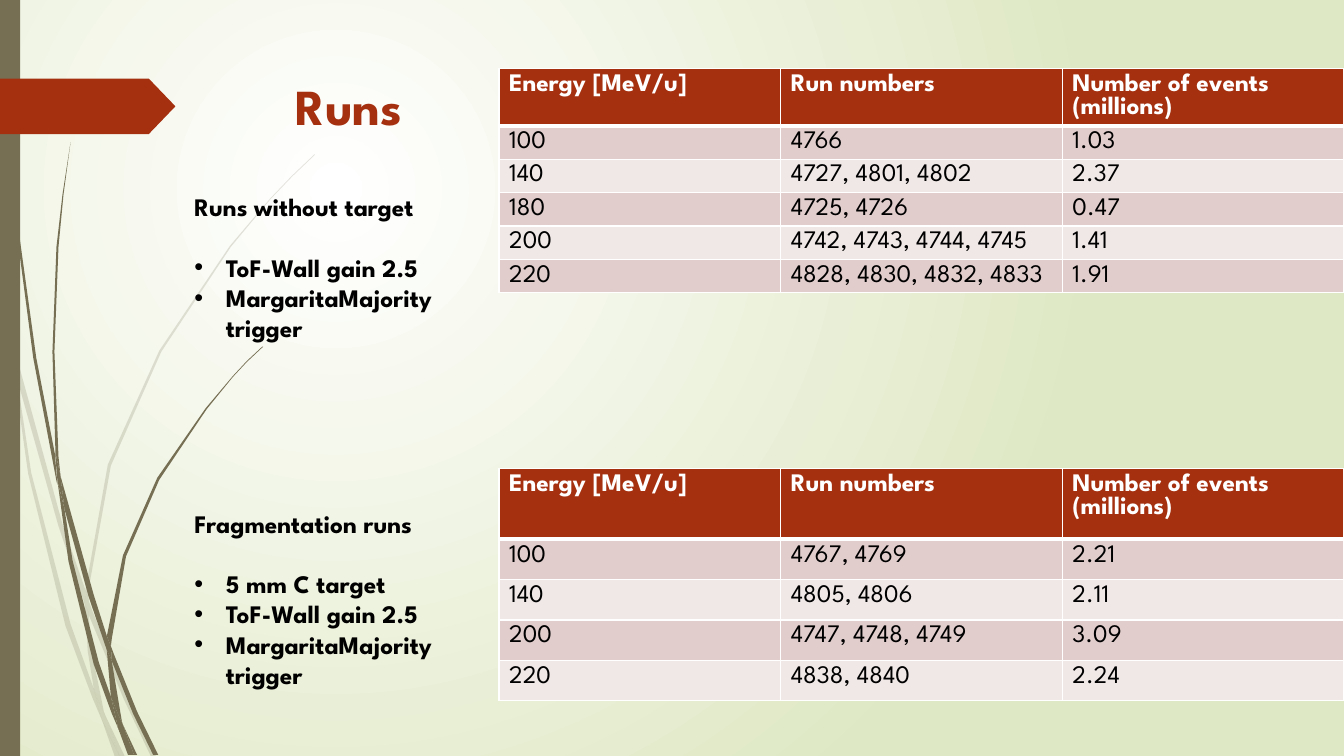
from lxml import etree
from pptx import Presentation
from pptx import util as u
from pptx.dml.color import RGBColor
from pptx.enum import shapes, text
from pptx.oxml.ns import qn

FONT = "League Spartan"
RUST = RGBColor(0xA5, 0x30, 0x10)
OLIVE = RGBColor(0x76, 0x6F, 0x54)
LIME = RGBColor(0xDF, 0xE8, 0xC4)
ROSE = RGBColor(0xE1, 0xCD, 0xCC)
BLUSH = RGBColor(0xF0, 0xE8, 0xE7)
WHITE = RGBColor(0xFF, 0xFF, 0xFF)
BLACK = RGBColor(0, 0, 0)

HEAD = ("Energy [MeV/u]", "Run numbers", "Number of events (millions)")
EMPTY = [
    ("100", "4766", "1.03"),
    ("140", "4727, 4801, 4802", "2.37"),
    ("180", "4725, 4726", "0.47"),
    ("200", "4742, 4743, 4744, 4745", "1.41"),
    ("220", "4828, 4830, 4832, 4833", "1.91"),
]
FRAGS = [
    ("100", "4767, 4769", "2.21"),
    ("140", "4805, 4806", "2.11"),
    ("200", "4747, 4748, 4749", "3.09"),
    ("220", "4838, 4840", "2.24"),
]

PALE = [
    [(.11, 3.5), (.09, 3.22), (0, 2.82), (0, 2.99), (.1, 3.44)],
    [(.58, 5.22), (.84, 5.99), (.85, 5.86), (.62, 5.2), (.14, 3.45), (.17, 3.76)],
    [(.92, 6.07), (.88, 5.96), (.88, 6.1), (1.23, 6.94), (1.5, 7.51), (1.55, 7.51), (1.27, 6.92)],
    [(1.19, 7.51), (1.24, 7.51), (1.05, 7.11)],
    [(.93, 6.83), (.7, 6.19), (.31, 4.69), (.17, 3.76), (.11, 3.5), (.28, 4.7), (.65, 6.21),
     (.92, 6.93), (1.01, 7.14), (.99, 7.07)],
    [(.84, 5.99), (.87, 6.46), (.93, 6.83), (.96, 6.92), (1.05, 7.11), (1.03, 7.06),
     (.91, 6.46), (.88, 6.1), (.88, 6.08)],
    [(.88, 5.84), (1.1, 4.62), (1.6, 3.49), (2.29, 2.45), (2.68, 1.98), (2.9, 1.75), (3.12, 1.54),
     (3.12, 1.53), (2.89, 1.75), (2.68, 1.97), (2.28, 2.44), (1.58, 3.48), (1.07, 4.61),
     (.85, 5.84), (.85, 5.86), (.88, 5.96)],
    [(1.01, 7.14), (1.14, 7.51), (1.19, 7.51)],
    [(.88, 6.08), (.88, 6.1), (.88, 5.96), (.85, 5.86), (.84, 5.99)],
    [(.96, 6.92), (.93, 6.83), (.99, 7.07), (1.01, 7.14), (1.19, 7.51), (1.05, 7.11)],
]
DARK = [
    [(.07, 1.1), (.17, 2.33), (.33, 3.55), (.56, 4.77), (.57, 4.81), (.55, 4.57), (.55, 4.53),
     (.36, 3.55), (.19, 2.32), (.08, 1.09), (.05, .48), (.04, 0), (.03, 0), (.04, .48)],
    [(.88, 5.92), (1.06, 6.45), (1.06, 6.33), (1.06, 6.31), (.93, 5.9), (.6, 4.72), (.64, 5.05)],
    [(1.13, 6.49), (1.1, 6.41), (1.11, 6.56), (1.32, 7.08), (1.52, 7.49), (1.57, 7.49), (1.36, 7.06)],
    [(1.1, 6.91), (.98, 6.57), (.72, 5.56), (.64, 5.05), (.57, 4.77), (.68, 5.57), (.93, 6.59),
     (1.11, 7.08), (1.17, 7.22), (1.16, 7.17)],
    [(.6, 4.72), (.58, 4.53), (.54, 3.49), (.58, 2.45), (.63, 1.93), (.7, 1.41), (.62, 1.93),
     (.56, 2.45), (.52, 3.49), (.55, 4.49)],
    [(1.33, 7.49), (1.36, 7.49), (1.22, 7.19)],
    [(.57, 4.77), (.64, 5.05), (.6, 4.72), (.55, 4.49), (.55, 4.53)],
    [(1.11, 6.33), (1.25, 5.52), (1.58, 4.76), (2.05, 4.06), (2.31, 3.74), (2.45, 3.59), (2.61, 3.44),
     (2.6, 3.44), (2.45, 3.58), (2.31, 3.73), (2.04, 4.05), (1.56, 4.74), (1.22, 5.51),
     (1.06, 6.31), (1.1, 6.41)],
    [(1.17, 7.22), (1.27, 7.49), (1.31, 7.49)],
    [(1.06, 6.45), (1.1, 6.91), (1.16, 7.06), (1.22, 7.19), (1.21, 7.16), (1.11, 6.56), (1.09, 6.51)],
    [(1.06, 6.45), (1.09, 6.51), (1.11, 6.56), (1.1, 6.41), (1.06, 6.31), (1.06, 6.33)],
    [(1.16, 7.06), (1.1, 6.91), (1.16, 7.17), (1.17, 7.22), (1.3, 7.49), (1.33, 7.49), (1.22, 7.19)],
]


def style(para, size, color, bold):
    for run in para.runs:
        run.font.name = FONT
        run.font.size = u.Pt(size)
        run.font.bold = bold
        run.font.color.rgb = color


def paint(shape, color):
    shape.shadow.inherit = False
    shape.fill.solid()
    shape.fill.fore_color.rgb = color
    shape.line.fill.background()


def stalks(slide, parts, alpha=100):
    for part in parts:
        dots = [(u.Inches(x), u.Inches(y)) for x, y in part]
        form = slide.shapes.build_freeform(*dots[0], scale=1.0)
        form.add_line_segments(dots[1:], close=True)
        stalk = form.convert_to_shape()
        paint(stalk, OLIVE)
        if alpha < 100:
            tint = stalk._element.spPr.find(".//" + qn("a:srgbClr"))
            etree.SubElement(tint, qn("a:alpha"), val=str(alpha * 1000))


def backdrop(slide):
    fill = slide.background.fill
    fill.gradient()
    for spot, (stop, color) in enumerate(zip(fill.gradient_stops, (WHITE, LIME))):
        stop.color.rgb = color
        stop.position = spot
    grad = slide.element.find(".//" + qn("a:gradFill"))
    for line in grad.findall(qn("a:lin")):
        grad.remove(line)
    ring = etree.SubElement(grad, qn("a:path"))
    ring.set("path", "circle")
    etree.SubElement(ring, qn("a:fillToRect"), l="50000", t="50000", r="100000", b="100000")


def margin(slide, tall):
    stalks(slide, PALE, 20)
    stalks(slide, DARK)
    bar = slide.shapes.add_shape(shapes.MSO_SHAPE.RECTANGLE, 0, 0, u.Inches(0.2), tall)
    paint(bar, OLIVE)
    tab = slide.shapes.add_shape(
        shapes.MSO_SHAPE.PENTAGON, 0, u.Inches(0.78), u.Inches(1.74), u.Inches(0.55))
    tab.adjustments[0] = 0.48
    paint(tab, RUST)


def heading(slide, words, x, y, w, h):
    title = slide.shapes.title
    title.left, title.top, title.width, title.height = map(u.Inches, (x, y, w, h))
    frame = title.text_frame
    frame.text = words
    frame.vertical_anchor = text.MSO_ANCHOR.TOP
    frame.paragraphs[0].alignment = text.PP_ALIGN.LEFT
    style(frame.paragraphs[0], 36, RUST, True)


def border(cell, sides):
    props = cell._tc.get_or_add_tcPr()
    for side, width in sides.items():
        line = etree.SubElement(props, qn("a:ln" + side), w=str(u.Pt(width)))
        solid = etree.SubElement(line, qn("a:solidFill"))
        etree.SubElement(solid, qn("a:srgbClr"), val=str(WHITE))


def grid(slide, rows, x, y, w, top, step):
    tall = top + step * len(rows)
    table = slide.shapes.add_table(
        len(rows) + 1, len(HEAD), *map(u.Inches, (x, y, w, tall))).table
    for col in table.columns:
        col.width = u.Inches(w / len(HEAD))
    for i, row in enumerate([HEAD, *rows]):
        table.rows[i].height = u.Inches(step if i else top)
        for j, words in enumerate(row):
            cell = table.cell(i, j)
            cell.text = words
            style(cell.text_frame.paragraphs[0], 18, BLACK if i else WHITE, i == 0)
            border(cell, {"L": 1, "R": 1, "T": 3 if i == 1 else 1, "B": 1 if i else 3})
            cell.fill.solid()
            cell.fill.fore_color.rgb = (ROSE if i % 2 else BLUSH) if i else RUST


def notes(slide, lead, items, x, y, w, h):
    frame = slide.shapes.add_textbox(*map(u.Inches, (x, y, w, h))).text_frame
    frame.word_wrap = True
    frame.text = "\n".join([lead, *items])
    for para in frame.paragraphs:
        para.line_spacing = u.Pt(21.6)
        style(para, 18, BLACK, True)
    frame.paragraphs[0].space_after = u.Pt(21.6)
    for para in frame.paragraphs[1:]:
        props = para._p.get_or_add_pPr()
        props.set("marL", str(u.Pt(22.5)))
        props.set("indent", str(-u.Pt(22.5)))
        etree.SubElement(props, qn("a:buFont"), typeface="Arial")
        etree.SubElement(props, qn("a:buChar"), char="•")


def main():
    deck = Presentation()
    deck.slide_width, deck.slide_height = u.Inches(13.33), u.Inches(7.5)
    slide = deck.slides.add_slide(deck.slide_layouts[5])
    backdrop(slide)
    margin(slide, deck.slide_height)
    heading(slide, "Runs", 2.83, 0.69, 9.75, 1.4)
    grid(slide, EMPTY, 4.95, 0.68, 8.38, 0.57, 0.33)
    notes(slide, "Runs without target",
          ["ToF-Wall gain 2.5", "MargaritaMajority trigger"], 1.83, 1.85, 3, 1.62)
    grid(slide, FRAGS, 4.95, 4.65, 8.38, 0.7, 0.4)
    notes(slide, "Fragmentation runs",
          ["5 mm C target", "ToF-Wall gain 2.5", "MargaritaMajority trigger"], 1.83, 4.99, 2.76, 1.92)
    deck.save("out.pptx")


if __name__ == "__main__":
    main()
